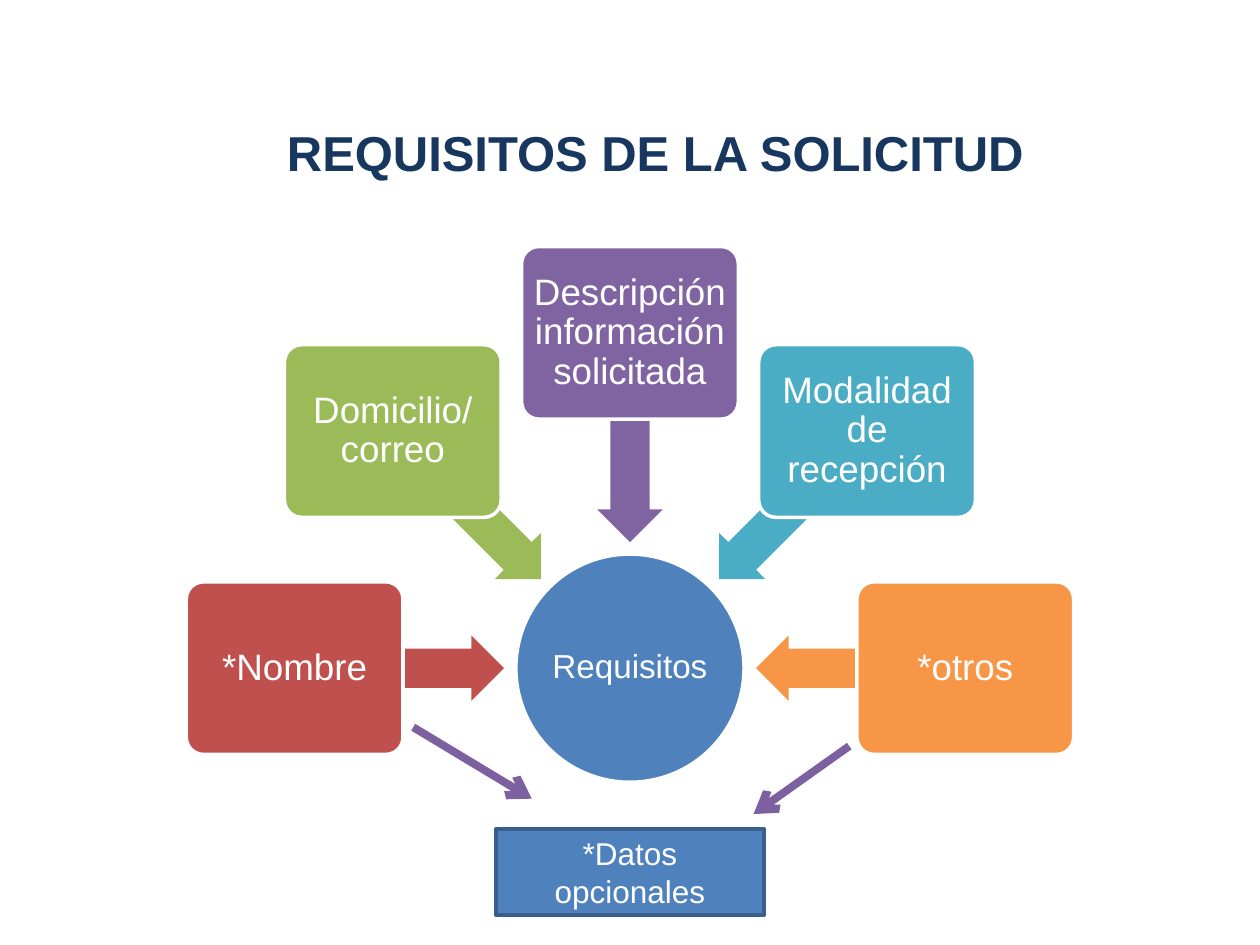
from math import cos, radians, sin

from lxml.etree import SubElement
from pptx import Presentation
from pptx.dml.color import RGBColor
from pptx.enum.shapes import MSO_CONNECTOR as Connector, MSO_SHAPE as Shape
from pptx.enum.text import MSO_ANCHOR as Anchor, PP_ALIGN as Align
from pptx.oxml.ns import qn
from pptx.util import Cm, Pt

COLORS = {
    "white": "FFFFFF",
    "navy": "17375E",
    "blue": "4F81BD",
    "dark_blue": "3A5F8C",
    "red": "C0504D",
    "green": "9BBB59",
    "purple": "8064A2",
    "aqua": "4BACC6",
    "orange": "F79646",
    "violet": "7D60A0",
}
REQUIREMENTS = [
    ("*Nombre", "red"),
    ("Domicilio/ correo", "green"),
    ("Descripción información solicitada", "purple"),
    ("Modalidad de recepción", "aqua"),
    ("*otros", "orange"),
]
CENTER_X, CENTER_Y = 12.7, 13.47
HUB_SIZE = 4.6
BOX_RADIUS, BOX_SIZE = 6.76, (4.37, 3.48)
ARROW_RADIUS, ARROW_SIZE = 4.65, (4.22, 1.32)


def color(name):
    return RGBColor.from_string(COLORS[name])


def write_text(shape, text, size=21, fill="white", bold=False, inset=0.1, spacing=0.9):
    frame = shape.text_frame
    frame.word_wrap = True
    frame.vertical_anchor = Anchor.MIDDLE
    frame.margin_left = frame.margin_right = Cm(inset)
    frame.margin_top = frame.margin_bottom = Cm(min(inset, 0.13))
    paragraph = frame.paragraphs[0]
    paragraph.alignment = Align.CENTER
    paragraph.line_spacing = spacing
    run = paragraph.add_run()
    run.text = text
    run.font.name = "Arial"
    run.font.size = Pt(size)
    run.font.bold = bold
    run.font.color.rgb = color(fill)


def around_hub(radius, angle):
    turn = radians(angle)
    return CENTER_X + radius * cos(turn), CENTER_Y + radius * sin(turn)


class RequirementsSlide:
    def __init__(self, presentation):
        self.slide = presentation.slides.add_slide(presentation.slide_layouts[5])

    def title(self, text):
        title = self.slide.shapes.title
        title.left, title.top = Cm(0.66), Cm(2.64)
        title.width, title.height = Cm(25.1), Cm(0.86)
        write_text(title, text, size=28, fill="navy", bold=True, inset=0.25, spacing=1.0)

    def centered_shape(self, kind, center, size, fill, line=None):
        (x, y), (width, height) = center, size
        shape = self.slide.shapes.add_shape(
            kind, Cm(x - width / 2), Cm(y - height / 2), Cm(width), Cm(height))
        shape.shadow.inherit = False
        shape.fill.solid()
        shape.fill.fore_color.rgb = color(fill)
        if line:
            shape.line.color.rgb = color(line)
            shape.line.width = Pt(2)
        else:
            shape.line.fill.background()
        return shape

    def hub(self, text):
        hub = self.centered_shape(
            Shape.OVAL, (CENTER_X, CENTER_Y), (HUB_SIZE, HUB_SIZE), "blue", "white")
        write_text(hub, text, size=19, inset=0.03)

    def requirement(self, text, fill, angle):
        arrow = self.centered_shape(
            Shape.LEFT_ARROW, around_hub(ARROW_RADIUS, angle), ARROW_SIZE, fill)
        arrow.adjustments[0] = 0.6
        arrow.adjustments[1] = 0.5
        arrow.rotation = angle % 360
        box = self.centered_shape(
            Shape.ROUNDED_RECTANGLE, around_hub(BOX_RADIUS, angle), BOX_SIZE, fill, "white")
        box.adjustments[0] = 0.1
        write_text(box, text)

    def optional_data(self, text):
        box = self.centered_shape(
            Shape.FLOWCHART_PROCESS, (CENTER_X, 17.58), (5.41, 1.73), "blue", "dark_blue")
        write_text(box, text, size=18, inset=0.25, spacing=1.0)

    def pointer(self, start, end):
        connector = self.slide.shapes.add_connector(
            Connector.STRAIGHT, *[Cm(value) for value in (*start, *end)])
        connector.line.color.rgb = color("violet")
        connector.line.width = Pt(4.5)
        properties = connector._element.spPr
        SubElement(properties.find(qn("a:ln")), qn("a:tailEnd"), type="arrow")
        SubElement(properties, qn("a:effectLst"))


def main():
    presentation = Presentation()
    presentation.slide_width, presentation.slide_height = Cm(25.4), Cm(19.05)
    slide = RequirementsSlide(presentation)
    slide.title("REQUISITOS DE LA SOLICITUD")
    slide.hub("Requisitos")
    for index, (text, fill) in enumerate(REQUIREMENTS):
        slide.requirement(text, fill, 180 + 45 * index)
    slide.optional_data("*Datos opcionales")
    slide.pointer((8.33, 14.66), (10.72, 16.1))
    slide.pointer((17.12, 15.04), (15.19, 16.41))
    presentation.save("out.pptx")


if __name__ == "__main__":
    main()
